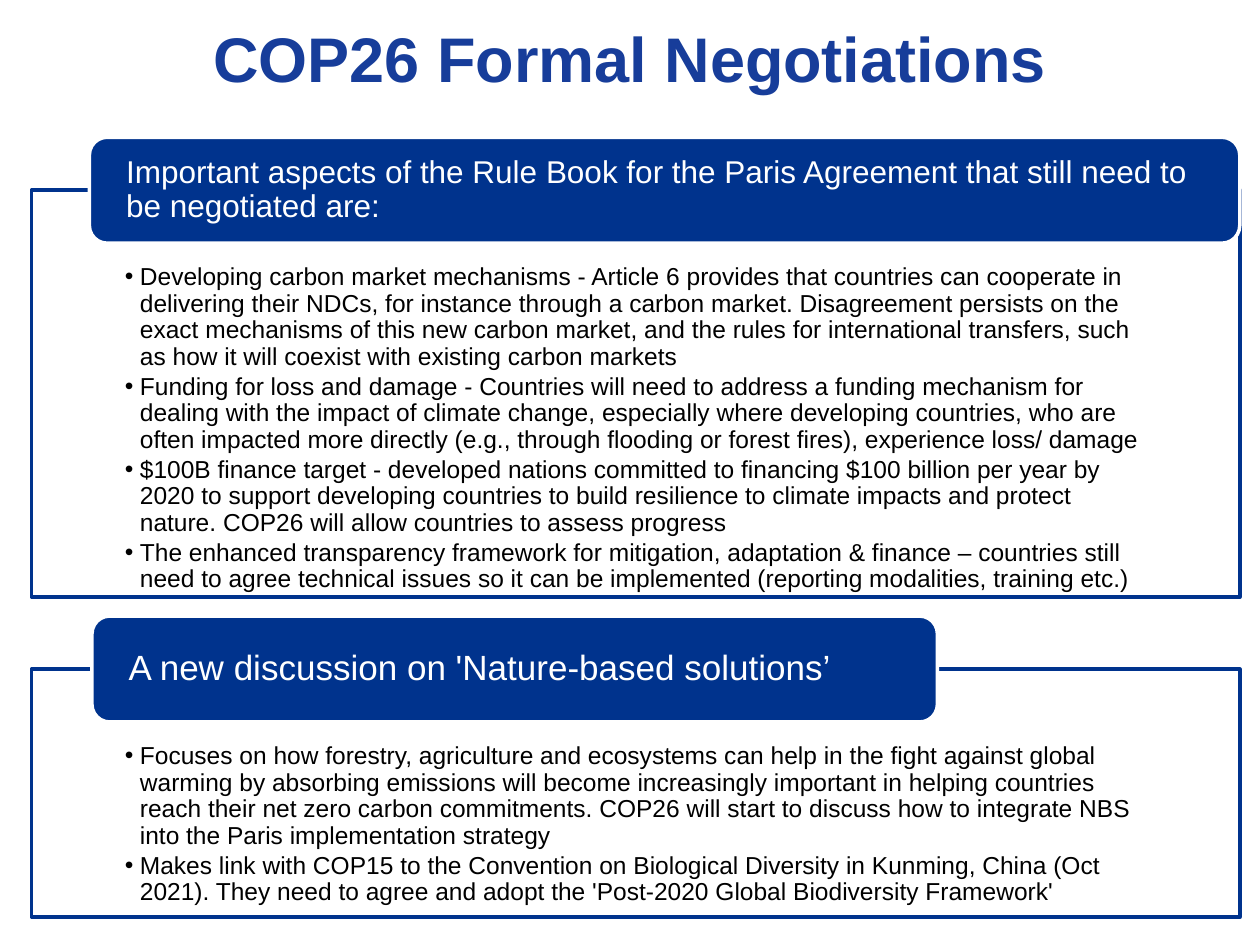
from lxml.etree import SubElement
from pptx import Presentation
from pptx.dml.color import RGBColor
from pptx.enum.shapes import MSO_SHAPE
from pptx.enum.text import MSO_ANCHOR, MSO_AUTO_SIZE, PP_ALIGN
from pptx.oxml.ns import qn
from pptx.util import Inches, Pt

TITLE = "COP26 Formal Negotiations"
SECTIONS = [
    {
        "heading": "Important aspects of the Rule Book for the Paris Agreement that still need to be negotiated are:",
        "heading_size": 18,
        "heading_left": 0.71,
        "heading_width": 9.13,
        "top": 1.51,
        "height": 3.23,
        "points": [
            "Developing carbon market mechanisms - Article 6 provides that countries can cooperate in delivering their NDCs, for instance through a carbon market. Disagreement persists on the exact mechanisms of this new carbon market, and the rules for international transfers, such as how it will coexist with existing carbon markets",
            "Funding for loss and damage - Countries will need to address a funding mechanism for dealing with the impact of climate change, especially where developing countries, who are often impacted more directly (e.g., through flooding or forest fires), experience loss/ damage",
            "$100B finance target - developed nations committed to financing $100 billion per year by 2020 to support developing countries to build resilience to climate impacts and protect nature. COP26 will allow countries to assess progress",
            "The enhanced transparency framework for mitigation, adaptation & finance – countries still need to agree technical issues so it can be implemented (reporting modalities, training etc.)",
        ],
    },
    {
        "heading": "A new discussion on 'Nature-based solutions’",
        "heading_size": 20,
        "heading_left": 0.73,
        "heading_width": 6.71,
        "top": 5.31,
        "height": 1.97,
        "points": [
            "Focuses on how forestry, agriculture and ecosystems can help in the fight against global warming by absorbing emissions will become increasingly important in helping countries reach their net zero carbon commitments. COP26 will start to discuss how to integrate NBS into the Paris implementation strategy",
            "Makes link with COP15 to the Convention on Biological Diversity in Kunming, China (Oct 2021). They need to agree and adopt the 'Post-2020 Global Biodiversity Framework'",
        ],
    },
]

PANEL_LEFT, PANEL_WIDTH = 0.25, 9.59
HEADING_HEIGHT = 0.84
BULLET_INDENT = 0.12
NAVY = RGBColor(0x00, 0x33, 0x8D)
TITLE_BLUE = RGBColor(0x17, 0x3D, 0x9A)
WHITE = RGBColor(0xFF, 0xFF, 0xFF)
BLACK = RGBColor(0x00, 0x00, 0x00)


def place(shape, left, top, width, height):
    shape.left, shape.top = Inches(left), Inches(top)
    shape.width, shape.height = Inches(width), Inches(height)


def paint(shape, fill, line):
    shape.fill.solid()
    shape.fill.fore_color.rgb = fill
    shape.line.color.rgb = line
    shape.line.width = Pt(2)


def set_frame(shape, anchor, left, top, right, bottom):
    frame = shape.text_frame
    frame.word_wrap = True
    frame.auto_size = MSO_AUTO_SIZE.NONE
    frame.vertical_anchor = anchor
    frame.margin_left, frame.margin_top = Inches(left), Inches(top)
    frame.margin_right, frame.margin_bottom = Inches(right), Inches(bottom)
    return frame


def format_paragraph(paragraph, size, color, alignment=PP_ALIGN.LEFT, spacing=0.9, after=0, bold=False):
    paragraph.alignment = alignment
    paragraph.line_spacing = spacing
    paragraph.space_before = Pt(0)
    paragraph.space_after = Pt(after)
    font = paragraph.font
    font.name, font.size, font.bold = "Arial", Pt(size), bold
    font.color.rgb = color


def add_bullet(paragraph):
    properties = paragraph._p.get_or_add_pPr()
    properties.set("marL", str(Inches(BULLET_INDENT)))
    properties.set("indent", str(-Inches(BULLET_INDENT)))
    SubElement(properties, qn("a:buFont"), typeface="Arial")
    SubElement(properties, qn("a:buChar"), char="•")


def fill_panel(panel, section):
    place(panel, PANEL_LEFT, section["top"], PANEL_WIDTH, section["height"])
    paint(panel, WHITE, NAVY)
    frame = set_frame(panel, MSO_ANCHOR.TOP, 0.74, 0.59, 0.74, 0.11)
    for index, point in enumerate(section["points"]):
        paragraph = frame.add_paragraph() if index else frame.paragraphs[0]
        paragraph.text = point
        paragraph.level = 1
        add_bullet(paragraph)
        format_paragraph(paragraph, 14, BLACK, after=2)


def add_heading(slide, section):
    heading = slide.shapes.add_shape(
        MSO_SHAPE.ROUNDED_RECTANGLE,
        Inches(section["heading_left"]), Inches(section["top"] - HEADING_HEIGHT / 2),
        Inches(section["heading_width"]), Inches(HEADING_HEIGHT))
    heading.shadow.inherit = False
    paint(heading, NAVY, WHITE)
    frame = set_frame(heading, MSO_ANCHOR.MIDDLE, 0.25, 0, 0.25, 0)
    frame.text = section["heading"]
    format_paragraph(frame.paragraphs[0], section["heading_size"], WHITE)


def main():
    presentation = Presentation()
    presentation.slide_width, presentation.slide_height = Inches(10), Inches(7.5)
    slide = presentation.slides.add_slide(presentation.slide_layouts[3])

    title = slide.shapes.title
    place(title, 0, 0.2, 10, 0.75)
    frame = set_frame(title, MSO_ANCHOR.TOP, 0, 0, 0, 0)
    frame.text = TITLE
    format_paragraph(frame.paragraphs[0], 36, TITLE_BLUE, PP_ALIGN.CENTER, 0.95, bold=True)

    for panel_index, section in enumerate(SECTIONS, start=1):
        fill_panel(slide.placeholders[panel_index], section)
        add_heading(slide, section)

    presentation.save("out.pptx")


if __name__ == "__main__":
    main()
